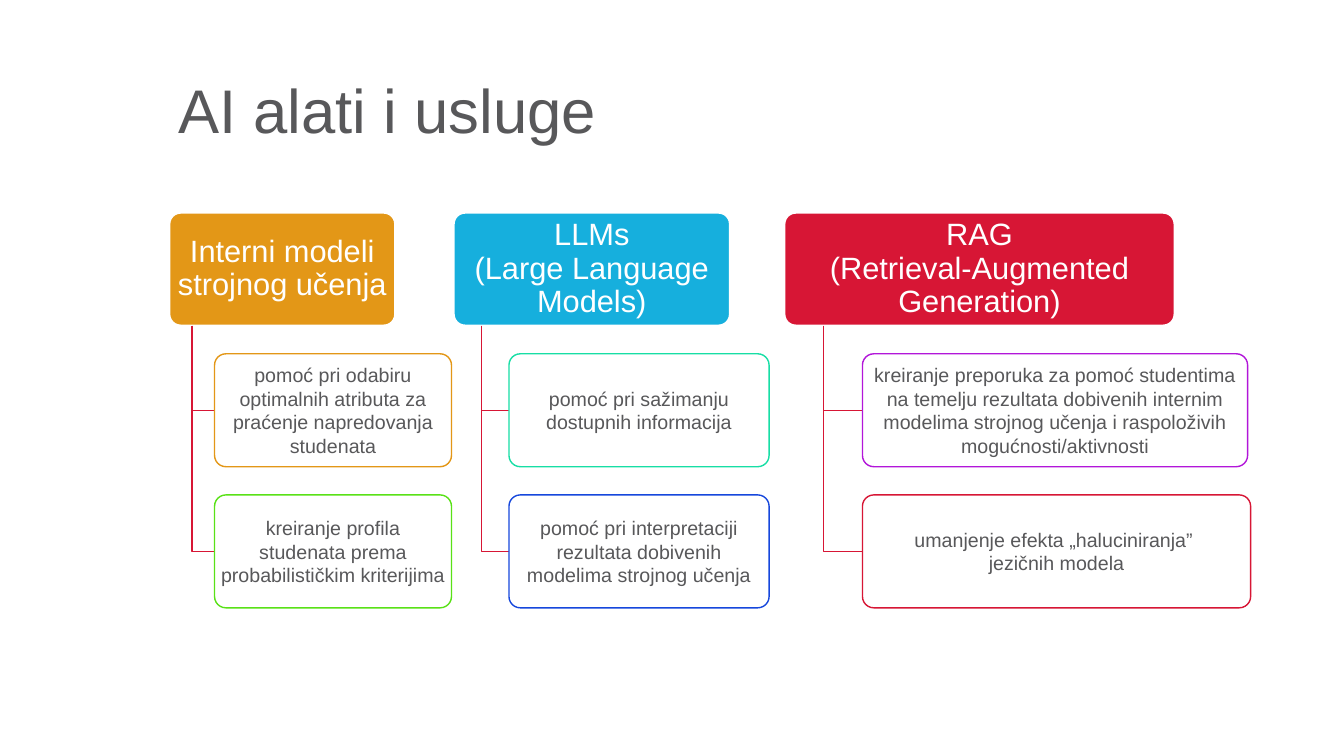
from dataclasses import dataclass

from lxml import etree
from pptx import Presentation
from pptx.dml.color import RGBColor
from pptx.enum.shapes import MSO_SHAPE
from pptx.enum.text import MSO_ANCHOR, PP_ALIGN
from pptx.oxml.ns import qn
from pptx.util import Inches, Pt

ROUNDED = MSO_SHAPE.ROUNDED_RECTANGLE
MIDDLE = MSO_ANCHOR.MIDDLE
CENTER, LEFT = PP_ALIGN.CENTER, PP_ALIGN.LEFT

FONT = "Arial"
WHITE, GREY, RED, ORANGE, BLUE = "FFFFFF", "58585A", "D71635", "E39717", "16AFDD"

TOP = 2.11
BOX_HEIGHT = 1.12
ROW_STEP = 1.4
STEM_SHARE = 0.1  # stem offset as a share of the header width
CARD_SHARE = 0.2  # card offset as a share of the header width
TITLE_ONLY = 5


@dataclass
class Card:
    text: str
    width: float
    outline: str


@dataclass
class Column:
    text: str
    left: float
    width: float
    fill: str
    cards: list[Card]


@dataclass
class BoxStyle:
    fill: str
    outline: str
    line_width: float
    text_color: str
    text_size: float
    line_spacing: float
    inset_x: float
    inset_y: float


COLUMNS = [
    Column("Interni modeli strojnog učenja", 1.68, 2.24, ORANGE, [
        Card("pomoć pri odabiru optimalnih atributa za praćenje napredovanja studenata",
             2.35, ORANGE),
        Card("kreiranje profila studenata prema probabilističkim kriterijima",
             2.35, "59E117"),
    ]),
    Column("LLMs\n(Large Language Models)", 4.5, 2.74, BLUE, [
        Card("pomoć pri sažimanju dostupnih informacija", 2.58, "17DEA5"),
        Card("pomoć pri interpretaciji rezultata dobivenih modelima strojnog učenja",
             2.58, "1647DC"),
    ]),
    Column("RAG\n(Retrieval-Augmented Generation)", 7.78, 3.87, RED, [
        Card("kreiranje preporuka za pomoć studentima na temelju rezultata dobivenih "
             "internim modelima strojnog učenja i raspoloživih mogućnosti/aktivnosti",
             3.82, "B216D9"),
        Card("umanjenje efekta „haluciniranja” \njezičnih modela", 3.85, RED),
    ]),
]


def color(value: str) -> RGBColor:
    return RGBColor.from_string(value)


def apply(target, values: dict) -> None:
    for name, value in values.items():
        setattr(target, name, value)


def write(shape, text: str, size: float, text_color: str, align, spacing: float) -> None:
    apply(shape.text_frame, {"word_wrap": True, "vertical_anchor": MIDDLE})
    para = shape.text_frame.paragraphs[0]
    para.text = text
    apply(para, {"alignment": align, "line_spacing": spacing})
    for span in para.runs:
        apply(span.font, {"name": FONT, "size": Pt(size)})
        span.font.color.rgb = color(text_color)


def set_line(shape, line_color: str, width: float) -> None:
    shape.shadow.inherit = False
    shape.line.color.rgb = color(line_color)
    shape.line.width = Pt(width)


def set_opacity(shape, percent: int) -> None:
    fill_color = shape.fill._xPr.find(qn("a:solidFill"))[0]
    etree.SubElement(fill_color, qn("a:alpha")).set("val", str(percent * 1000))


def add_box(page, text: str, left: float, top: float, width: float, style: BoxStyle):
    box = page.shapes.add_shape(
        ROUNDED, Inches(left), Inches(top), Inches(width), Inches(BOX_HEIGHT))
    box.adjustments[0] = 0.1
    box.fill.solid()
    box.fill.fore_color.rgb = color(style.fill)
    set_line(box, style.outline, style.line_width)
    apply(box.text_frame, {
        "margin_left": Inches(style.inset_x), "margin_right": Inches(style.inset_x),
        "margin_top": Inches(style.inset_y), "margin_bottom": Inches(style.inset_y)})
    write(box, text, style.text_size, style.text_color, CENTER, style.line_spacing)
    return box


def add_elbow(page, stem: float, top: float, end_x: float, end_y: float) -> None:
    builder = page.shapes.build_freeform(Inches(stem), Inches(top))
    builder.add_line_segments(
        [(Inches(stem), Inches(end_y)), (Inches(end_x), Inches(end_y))], close=False)
    elbow = builder.convert_to_shape()
    elbow.fill.background()
    set_line(elbow, RED, 1)


def add_column(page, column: Column) -> None:
    header_style = BoxStyle(column.fill, WHITE, 1.5, WHITE, 22, 0.9, 0.05, 0.03)
    add_box(page, column.text, column.left, TOP, column.width, header_style)
    stem = column.left + STEM_SHARE * column.width
    card_left = column.left + CARD_SHARE * column.width
    for row, card in enumerate(column.cards, start=1):
        top = TOP + row * ROW_STEP
        add_elbow(page, stem, TOP + BOX_HEIGHT, card_left, top + BOX_HEIGHT / 2)
        card_style = BoxStyle(WHITE, card.outline, 1, GREY, 14, 1.0, 0.03, 0.02)
        box = add_box(page, card.text, card_left, top, card.width, card_style)
        set_opacity(box, 90)


def main() -> None:
    deck = Presentation()
    apply(deck, {"slide_width": Inches(13.33), "slide_height": Inches(7.5)})
    page = deck.slides.add_slide(deck.slide_layouts[TITLE_ONLY])

    # Title
    title = page.shapes.title
    apply(title, {"left": Inches(1.67), "top": Inches(0.4),
                  "width": Inches(10.75), "height": Inches(1.45)})
    write(title, "AI alati i usluge", 44, GREY, LEFT, 0.9)

    # Columns of tools with their uses
    for column in COLUMNS:
        add_column(page, column)

    deck.save("out.pptx")


if __name__ == "__main__":
    main()
